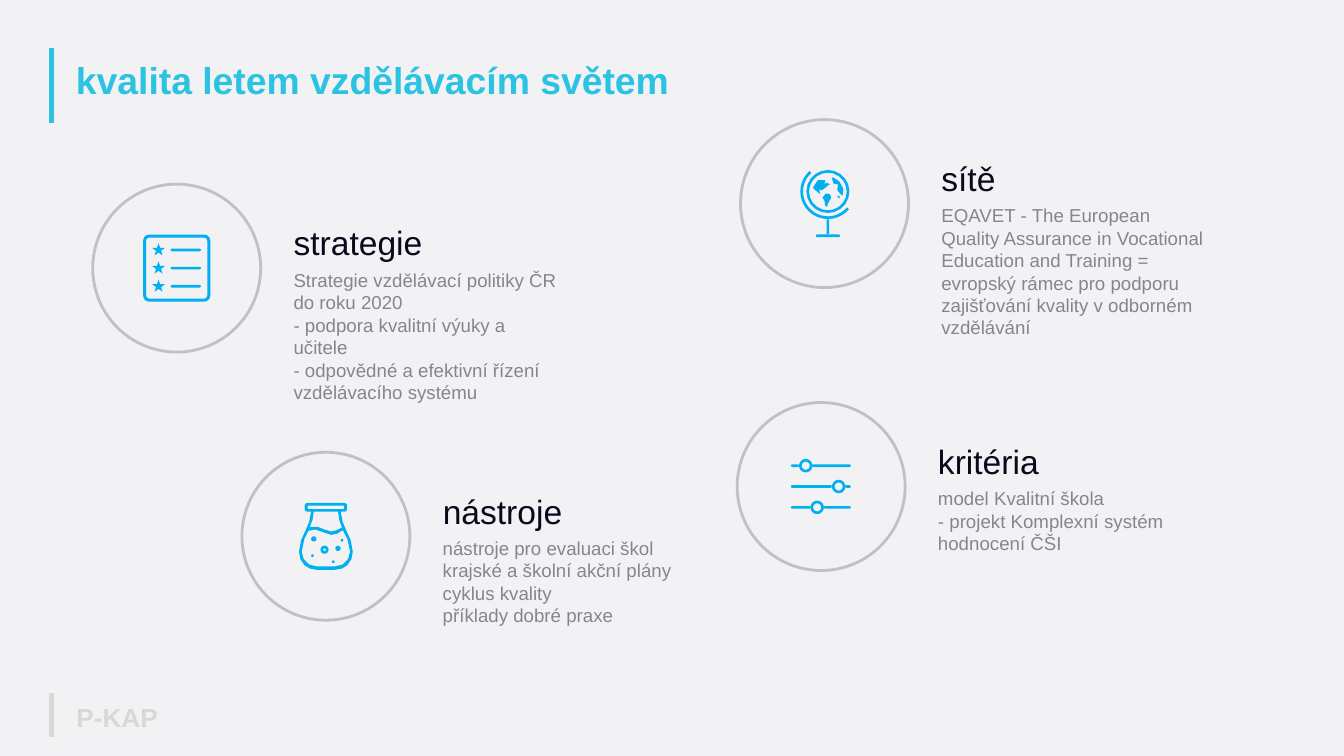
"""Build a slide with four circled topics around education quality."""
import math

from lxml import etree
from pptx import Presentation
from pptx import util as u
from pptx.dml.color import RGBColor
from pptx.enum import shapes, text
from pptx.oxml.ns import qn

COLS, ROWS = 20, 11.25
CELL = u.Inches(1)
FONT = "Arial"
BACK = RGBColor(0xF2, 0xF2, 0xF5)
CYAN = RGBColor(0x2B, 0xC3, 0xE1)
PALE = RGBColor(0xD8, 0xD8, 0xD8)
RING = RGBColor(0xC0, 0xC0, 0xC8)
DARK = RGBColor(0x0A, 0x09, 0x1B)
GREY = RGBColor(0x85, 0x85, 0x91)
BLUE = RGBColor(0x00, 0xB0, 0xF0)
RING_SIZE = 2.5
STROKE = 0.04

FLASK_SIDE = [(0.22, -0.37), (0.25, -0.21), (0.31, -0.07), (0.37, 0.06), (0.4, 0.23),
              (0.38, 0.34), (0.32, 0.43), (0.24, 0.48), (0.13, 0.5)]
FLASK_AIR = [(0.18, -0.37), (0.2, -0.24), (0.24, -0.13), (0.16, -0.09), (0.08, -0.07),
             (-0.02, -0.1), (-0.12, -0.14), (-0.24, -0.14), (-0.2, -0.24), (-0.18, -0.37)]
FLASK_LIQUID = [(-0.26, -0.08), (-0.16, -0.1), (-0.04, -0.06), (0.08, -0.02), (0.17, -0.04),
                (0.25, -0.09), (0.32, 0.04), (0.36, 0.23), (0.33, 0.34), (0.25, 0.42),
                (0.13, 0.45), (-0.13, 0.45), (-0.25, 0.42), (-0.33, 0.34), (-0.36, 0.23),
                (-0.32, 0.04)]
BUBBLES = [(-0.2, 0.29, 0.02), (-0.18, 0.04, 0.04), (0.24, 0.06, 0.02),
           (0.18, 0.18, 0.04), (0.11, 0.38, 0.02)]
LANDS = [
    [(0.12, -0.34), (0.11, -0.38), (0.13, -0.39), (0.22, -0.33), (0.28, -0.22),
     (0.27, -0.12), (0.24, -0.14), (0.19, -0.2), (0.2, -0.29), (0.14, -0.29)],
    [(0.02, -0.15), (0.08, -0.14), (0.1, -0.09), (0.05, 0), (0.04, 0.05),
     (0.01, 0.03), (0, -0.04), (-0.03, -0.09)],
    [(0.2, -0.12), (0.23, -0.1), (0.22, -0.08), (0.19, -0.1)],
    [(-0.15, -0.21), (-0.17, -0.24), (-0.1, -0.35), (-0.03, -0.35), (0.01, -0.35),
     (0.01, -0.32), (-0.01, -0.29), (0.03, -0.31), (0.08, -0.29), (0.04, -0.26),
     (-0.02, -0.21), (-0.04, -0.2), (-0.08, -0.21), (-0.06, -0.14)],
]


def cells(*values):
    """Turn grid cells into slide lengths."""
    return [round(v * CELL) for v in values]


def arc(x, y, radius, start=0, end=360, steps=20):
    """List points along an arc given in degrees."""
    angles = [math.radians(start + (end - start) * i / steps) for i in range(steps + 1)]
    return [(x + radius * math.cos(a), y + radius * math.sin(a)) for a in angles]


def ring(x, y, radius):
    """Return the outer and inner contours of a ring."""
    return [arc(x, y, radius), arc(x, y, radius - STROKE)]


def box(x, y, w, h, radius):
    """List the points of a rounded rectangle around its centre."""
    dx, dy = w / 2 - radius, h / 2 - radius
    corners = [(dx, dy, 0), (-dx, dy, 90), (-dx, -dy, 180), (dx, -dy, 270)]
    return [p for cx, cy, a in corners for p in arc(x + cx, y + cy, radius, a, a + 90, 3)]


def bar(left, right, y):
    """List the points of a round-ended horizontal bar."""
    return box((left + right) / 2, y, right - left, STROKE, STROKE / 2)


def star(x, y):
    """List the points of a five-pointed star."""
    turns = [(0.1 if i % 2 == 0 else 0.04, math.radians(36 * i - 90)) for i in range(10)]
    return [(x + r * math.cos(a), y + r * math.sin(a)) for r, a in turns]


def checklist():
    """Return the contours of a framed list with starred rows."""
    contours = [box(0, 0, 1, 1, 0.09), box(0, 0, 0.91, 0.91, 0.05)]
    for y in (-0.27, 0, 0.27):
        contours += [star(-0.27, y), bar(-0.09, 0.36, y)]
    return contours


def flask():
    """Return the contours of a flask with liquid and bubbles."""
    body = FLASK_SIDE + [(-x, y) for x, y in reversed(FLASK_SIDE)]
    lid = [box(0, -0.43, 0.63, 0.13, 0.04), box(0, -0.43, 0.54, 0.05, 0.01)]
    bubbles = [arc(*b, steps=10) for b in BUBBLES]
    return lid + [body, FLASK_AIR, FLASK_LIQUID] + ring(-0.02, 0.2, 0.06) + bubbles


def sliders():
    """Return the contours of three sliders with knobs."""
    contours = []
    for y, knob in ((-0.31, -0.23), (0, 0.26), (0.31, -0.06)):
        contours += ring(knob, y, 0.1)
        contours += [bar(-0.45, knob - 0.1, y), bar(knob + 0.1, 0.44, y)]
    return contours


def globe():
    """Return the contours of a globe on its stand."""
    x, y = 0.05, -0.18
    holder = arc(x, y, 0.41, 40, 228) + arc(x, y, 0.37, 228, 40)
    stand = [box(x, 0.35, STROKE, 0.23, 0), bar(x - 0.18, x + 0.18, 0.48)]
    return ring(x, y, 0.32) + [holder] + stand + LANDS


TOPICS = [
    (1.38, 2.74, checklist, "strategie", 1.56,
     ["Strategie vzdělávací politiky ČR do roku 2020", "- podpora kvalitní výuky a učitele",
      "- odpovědné a efektivní řízení vzdělávacího systému"]),
    (3.6, 6.73, flask, "nástroje", 0.77,
     ["nástroje pro evaluaci škol", "krajské a školní akční plány", "cyklus kvality",
      "příklady dobré praxe"]),
    (10.97, 5.99, sliders, "kritéria", 0.77,
     ["model Kvalitní škola", "- projekt Komplexní systém hodnocení ČŠI"]),
    (11.02, 1.78, globe, "sítě", 1.11,
     ["EQAVET - The European Quality Assurance in Vocational Education and Training = "
      "evropský rámec pro podporu zajišťování kvality v odborném vzdělávání"]),
]


def add_line(s, x, top, bottom, color):
    """Draw a vertical accent line."""
    ends = cells(x, top, x, bottom)
    c = s.shapes.add_connector(shapes.MSO_CONNECTOR.STRAIGHT, *ends)
    c.line.color.rgb = color
    c.line.width = u.Pt(5)
    etree.SubElement(c._element.spPr, qn("a:effectLst"))


def add_circle(parent, x, y):
    """Draw the ring around an icon."""
    sp = parent.shapes.add_shape(shapes.MSO_SHAPE.OVAL, *cells(x, y, RING_SIZE, RING_SIZE))
    sp.shadow.inherit = False
    sp.fill.background()
    sp.line.color.rgb = RING
    sp.line.width = u.Pt(3)


def add_icon(parent, x, y, contours):
    """Draw contours around a centre as one filled outline."""
    outlines = [[cells(x + dx, y + dy) for dx, dy in c] for c in contours]
    builder = parent.shapes.build_freeform(*outlines[0][0])
    for i, points in enumerate(outlines):
        if i:
            builder.move_to(*points[0])
        builder.add_line_segments(points[1:], close=True)
    sp = builder.convert_to_shape()
    sp.shadow.inherit = False
    sp.fill.solid()
    sp.fill.fore_color.rgb = BLUE
    sp.line.fill.background()


def write(tf, paragraphs, size, color, bold=False, spacing=None):
    """Fill a text frame with one run per paragraph."""
    tf.word_wrap = True
    for i, words in enumerate(paragraphs):
        p = tf.add_paragraph() if i else tf.paragraphs[0]
        p.alignment = text.PP_ALIGN.LEFT
        p.line_spacing = spacing
        r = p.add_run()
        r.text = words
        r.font.name, r.font.size, r.font.bold = FONT, u.Pt(size), bold
        r.font.color.rgb = color


def add_text(parent, x, y, w, h, *args, **style):
    """Add a wrapped text box."""
    write(parent.shapes.add_textbox(*cells(x, y, w, h)).text_frame, *args, **style)


def add_topic(s, x, y, icon, heading, height, body):
    """Add a ring with its icon, heading and body as one group."""
    g = s.shapes.add_group_shape()
    add_text(g, x + 2.89, y + 0.52, 3.58, 0.71, [heading], 36, DARK)
    add_text(g, x + 2.89, y + 1.21, 4.16, height, body, 20, GREY)
    add_circle(g, x, y)
    add_icon(g, x + RING_SIZE / 2, y + RING_SIZE / 2, icon())


def main():
    """Build and save the slide."""
    prs = Presentation()
    prs.slide_width, prs.slide_height = cells(COLS, ROWS)
    s = prs.slides.add_slide(prs.slide_layouts[5])
    s.background.fill.solid()
    s.background.fill.fore_color.rgb = BACK
    title = s.shapes.title
    title.left, title.top, title.width, title.height = cells(1.03, 0.87, 18.05, 0.71)
    title.text_frame.vertical_anchor = text.MSO_ANCHOR.MIDDLE
    write(title.text_frame, ["kvalita letem vzdělávacím světem"], 40, CYAN, True, 0.9)
    add_line(s, 0.77, 0.71, 1.83, CYAN)
    add_line(s, 0.77, 10.31, 10.96, PALE)
    add_text(s, 1.04, 10.39, 4, 0.55, ["P-KAP"], 28, PALE, bold=True)
    for topic in TOPICS:
        add_topic(s, *topic)
    prs.save("out.pptx")


if __name__ == "__main__":
    main()
